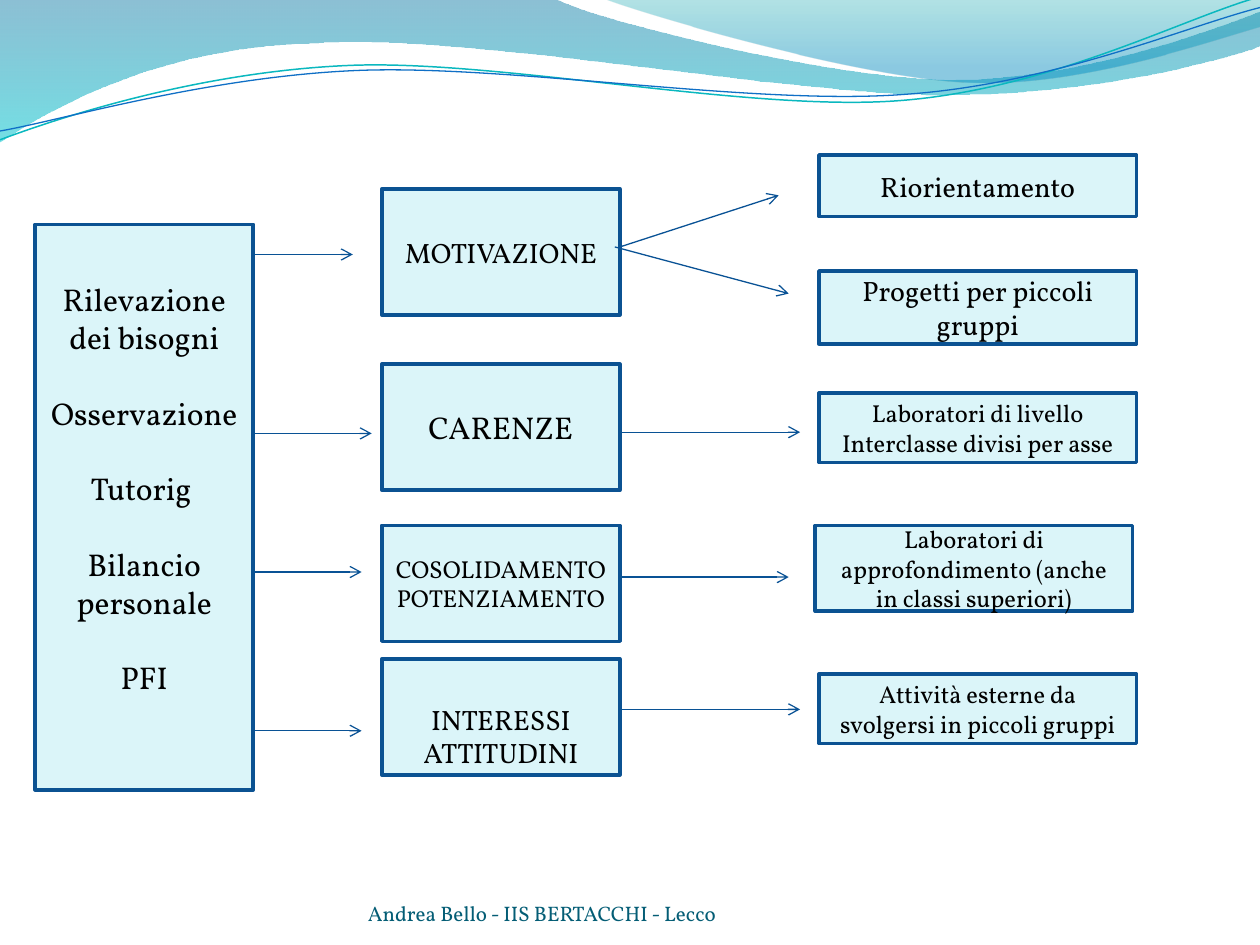
import pptx
import pptx.dml.color
import pptx.enum.shapes
import pptx.enum.text
import pptx.oxml
import pptx.oxml.ns
import pptx.util
from pptx.util import Inches

THEME = {
    "font": "Vollkorn", "text": "000000", "footer": "045D75",
    "box_fill": "DBF5F9", "box_line": "0B5292", "arrow": "095295",
    "large": 18, "medium": 16, "small": 14, "footer_size": 12,
    "box_width": 2, "arrow_width": 0.75, "inset": 0.05, "blank_line": 0.3,
}

# Content: left, top, width, height, size, paragraphs
NEEDS = (0.28, 1.78, 1.73, 4.49, "large",
         ["Rilevazione dei bisogni", "Osservazione", "Tutorig ", "Bilancio personale", "PFI"])
AREAS = [  # top, height, size, paragraphs
    (1.5, 1, "medium", ["MOTIVAZIONE"]),
    (2.89, 1, "large", ["CARENZE"]),
    (4.17, 0.92, "small", ["COSOLIDAMENTO", "POTENZIAMENTO"]),
    (5.23, 0.92, "medium", ["INTERESSI", "ATTITUDINI"]),
]
ACTIONS = [  # left, top, height, size, paragraphs
    (6.5, 1.23, 0.49, "medium", ["Riorientamento"]),
    (6.5, 2.15, 0.58, "medium", ["Progetti per piccoli gruppi"]),
    (6.5, 3.12, 0.55, "small", ["Laboratori di livello", "Interclasse divisi per asse"]),
    (6.47, 4.17, 0.68, "small", ["Laboratori di approfondimento (anche in classi superiori)"]),
    (6.5, 5.35, 0.55, "small", ["Attività esterne da svolgersi in piccoli gruppi"]),
]
AREA_LEFT, AREA_WIDTH, ACTION_WIDTH = 3.03, 1.89, 2.52
ARROWS = [  # from x, from y, to x, to y
    (2.01, 2.02, 2.8, 2.02), (2.01, 3.44, 2.95, 3.44),
    (2.01, 4.54, 2.87, 4.54), (2.01, 5.8, 2.87, 5.8),
    (4.92, 1.96, 6.18, 1.55), (4.88, 1.96, 6.26, 2.33),
    (4.94, 3.43, 6.35, 3.43), (4.94, 4.58, 6.26, 4.58), (4.92, 5.63, 6.35, 5.63),
]
FOOTER = "Andrea Bello - IIS BERTACCHI - Lecco"

# Wave outlines: a pair is a straight step, six numbers are a Bézier step
WAVE_FILLS = [  # steps, gradient stops (position, colour, opacity)
    ([(0, 0), (4.4, -0.01), (4.76, 0.17, 6.64, 0.63, 7.58, 0.63),
      (8.53, 0.63, 9.58, 0.26, 10, 0.09), (10.01, 0.36),
      (9.83, 0.44, 8.7, 0.76, 7.46, 0.75), (6.22, 0.75, 3.82, 0.28, 2.57, 0.34),
      (1.29, 0.36, 0.46, 0.83, -0.01, 1.13)],
     [(0, "0074A1", 45), (1, "00C6CF", 55)]),
    ([(4.79, -0.01), (5.09, 0.11, 6.82, 0.62, 7.69, 0.65),
      (8.56, 0.69, 9.61, 0.32, 10, 0.21), (10, 0)],
     [(0, "00A1A9", 30), (0.8, "008BBF", 45)]),
]
WAVE_LINES = [  # steps, colour, width
    ([(0, 1.11), (0.48, 0.93, 1.58, 0.57, 2.77, 0.52),
      (3.95, 0.47, 5.93, 0.89, 7.13, 0.8), (8.33, 0.71, 9.38, 0.15, 9.98, -0.02)],
     "0AB8BF", 0.85),
    ([(0, 1.04), (0.47, 0.96, 1.64, 0.61, 2.83, 0.56),
      (4.03, 0.51, 5.97, 0.84, 7.17, 0.75), (8.36, 0.67, 9.41, 0.21, 10, 0.06)],
     "0F6FC6", 0.75),
]


def color(value):
    return pptx.dml.color.RGBColor.from_string(value)


def drawing_xml(tag, attributes="", content=""):
    namespace = pptx.oxml.ns.nsdecls("a")
    return pptx.oxml.parse_xml(f"<a:{tag} {namespace} {attributes}>{content}</a:{tag}>")


def set_line(shape, value, width):
    shape.line.color.rgb = color(value)
    shape.line.width = pptx.util.Pt(width)


def add_wave(slide, steps, close):
    """Join the step ends, then bend each Bézier step with its control points."""
    ends = [(Inches(step[-2]), Inches(step[-1])) for step in steps]
    builder = slide.shapes.build_freeform(*ends[0], scale=1.0)
    builder.add_line_segments(ends[1:], close=close)
    shape = builder.convert_to_shape()
    shape.shadow.inherit = False
    segments = list(shape._element.iter(pptx.oxml.ns.qn("a:lnTo")))
    for segment, step in zip(segments, steps[1:]):
        if len(step) == 6:
            points = "".join(
                f'<a:pt x="{Inches(x) - shape.left}" y="{Inches(y) - shape.top}"/>'
                for x, y in zip(step[::2], step[1::2]))
            segment.getparent().replace(
                segment, drawing_xml("cubicBezTo", content=points))
    return shape


def write(frame, paragraphs, size, value, alignment, gap=0):
    frame.word_wrap = True
    for index, text in enumerate(paragraphs):
        paragraph = frame.add_paragraph() if index else frame.paragraphs[0]
        paragraph.alignment = alignment
        if index and gap:
            paragraph.space_before = Inches(gap)
        run = paragraph.add_run()
        run.text = text
        run.font.name = THEME["font"]
        run.font.size = pptx.util.Pt(THEME[size])
        run.font.color.rgb = color(value)


def add_box(slide, left, top, width, height, size, paragraphs, gap=0):
    shape = slide.shapes.add_shape(pptx.enum.shapes.MSO_SHAPE.RECTANGLE,
                                   *map(Inches, (left, top, width, height)))
    shape.shadow.inherit = False
    shape.fill.solid()
    shape.fill.fore_color.rgb = color(THEME["box_fill"])
    set_line(shape, THEME["box_line"], THEME["box_width"])
    shape.text_frame.vertical_anchor = pptx.enum.text.MSO_ANCHOR.MIDDLE
    write(shape.text_frame, paragraphs, size, THEME["text"],
          pptx.enum.text.PP_ALIGN.CENTER, gap)
    return shape


def add_arrow(slide, *ends):
    connector = slide.shapes.add_connector(pptx.enum.shapes.MSO_CONNECTOR.STRAIGHT,
                                           *map(Inches, ends))
    set_line(connector, THEME["arrow"], THEME["arrow_width"])
    properties = connector._element.spPr
    properties.find(pptx.oxml.ns.qn("a:ln")).append(drawing_xml("tailEnd", 'type="arrow"'))
    properties.append(drawing_xml("effectLst"))


def main():
    presentation = pptx.Presentation()
    presentation.slide_width, presentation.slide_height = Inches(10), Inches(7.5)
    slide = presentation.slides.add_slide(presentation.slide_layouts[6])

    # Header waves
    for steps, stops in WAVE_FILLS:
        shape = add_wave(slide, steps, close=True)
        shape.line.fill.background()
        shape.fill.gradient()
        shape.fill.gradient_angle = 270
        for stop, (position, value, opacity) in zip(shape.fill.gradient_stops, stops):
            stop.position = position
            stop.color.rgb = color(value)
        elements = list(shape._element.spPr.iter(pptx.oxml.ns.qn("a:srgbClr")))
        for element, (position, value, opacity) in zip(elements, stops):
            element.append(drawing_xml("alpha", f'val="{opacity * 1000}"'))
    for steps, value, width in WAVE_LINES:
        shape = add_wave(slide, steps, close=False)
        shape.fill.background()
        set_line(shape, value, width)

    # Boxes, with one line of room below the needs and above the interests
    room = Inches(THEME["inset"] + THEME["blank_line"])
    needs = add_box(slide, *NEEDS, gap=THEME["blank_line"])
    needs.text_frame.margin_bottom = room
    areas = [add_box(slide, AREA_LEFT, top, AREA_WIDTH, height, size, paragraphs)
             for top, height, size, paragraphs in AREAS]
    areas[-1].text_frame.margin_top = room
    for left, top, height, size, paragraphs in ACTIONS:
        add_box(slide, left, top, ACTION_WIDTH, height, size, paragraphs)

    # Arrows
    for ends in ARROWS:
        add_arrow(slide, *ends)

    # Footer
    footer = slide.shapes.add_textbox(*map(Inches, (2.92, 6.95, 3.67, 0.4)))
    frame = footer.text_frame
    frame.margin_left = frame.margin_top = frame.margin_right = frame.margin_bottom = 0
    frame.vertical_anchor = pptx.enum.text.MSO_ANCHOR.BOTTOM
    write(frame, [FOOTER], "footer_size", THEME["footer"], pptx.enum.text.PP_ALIGN.LEFT)

    presentation.save("out.pptx")


if __name__ == "__main__":
    main()
